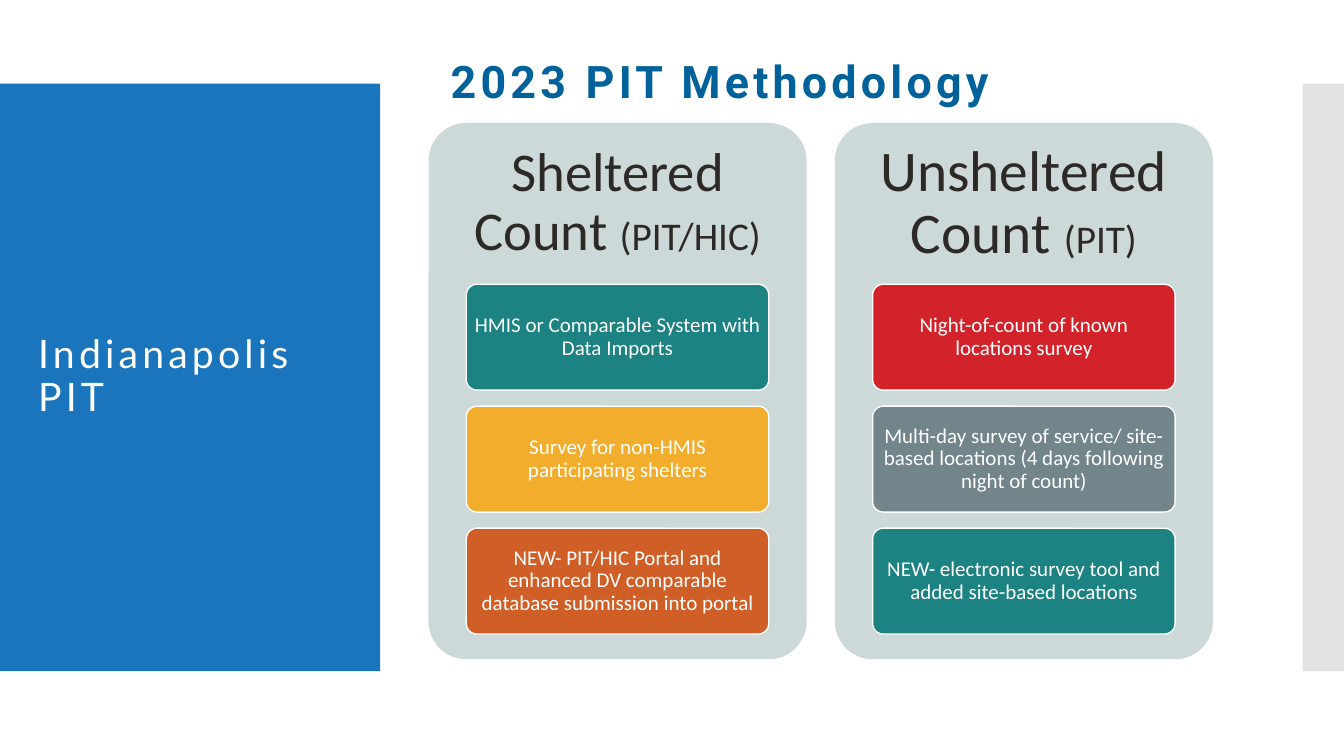
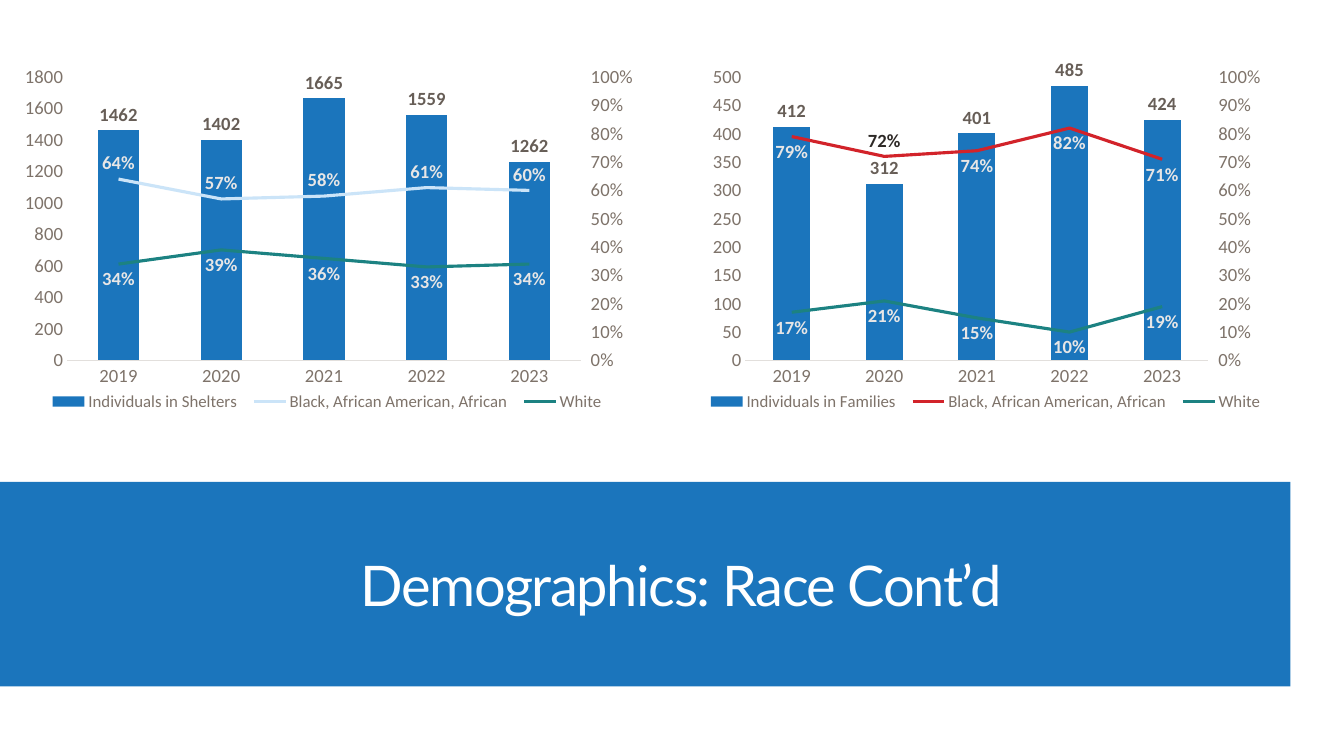
"""Build two slides on the Indianapolis PIT count: methodology and race demographics."""
import pptx
import pptx.chart.axis
import pptx.chart.data
import pptx.dml.color
import pptx.enum.chart
import pptx.enum.shapes
import pptx.enum.text
import pptx.oxml
import pptx.oxml.ns
import pptx.util

INCH = pptx.util.Inches
PT = pptx.util.Pt
QN = pptx.oxml.ns.qn
SHAPES = pptx.enum.shapes.MSO_SHAPE
ANCHOR = pptx.enum.text.MSO_ANCHOR
ALIGN = pptx.enum.text.PP_ALIGN
LABEL = pptx.enum.chart.XL_LABEL_POSITION
TICK = pptx.enum.chart.XL_TICK_MARK

WIDTH, HEIGHT = 13.33, 7.5
COLORS = {
    "blue": "1B75BC", "navy": "00629B", "white": "FFFFFF", "strip": "C8C8C8",
    "panel": "CDD8D8", "ink": "2D2926", "teal": "1C8282", "amber": "F3AD2C",
    "orange": "D05F27", "red": "D2232A", "slate": "71858B", "sky": "CBE4F8",
    "axis": "7E736A", "axis_line": "E2DFDC", "bar_label": "675E57", "line_label": "E7E6E6",
}

COUNTS = [
    {"heading": "Sheltered Count ", "scope": "(PIT/HIC)", "size": 39, "methods": [
        ("HMIS or Comparable System with Data Imports", "teal"),
        ("Survey for non-HMIS participating shelters", "amber"),
        ("NEW- PIT/HIC Portal and enhanced DV comparable database submission into portal", "orange"),
    ]},
    {"heading": "Unsheltered Count ", "scope": "(PIT)", "size": 41, "methods": [
        ("Night-of-count of known locations survey", "red"),
        ("Multi-day survey of service/ site-based locations (4 days following night of count)", "slate"),
        ("NEW- electronic survey tool and added site-based locations", "teal"),
    ]},
]

YEARS = ["2019", "2020", "2021", "2022", "2023"]
RACE_CHARTS = [
    {"box": (0.1, 0.58, 6.29, 3.7), "top": 1800, "step": 200,
     "plot_left": 0.09, "legend_span": (0.05, 0.9),
     "people": ("Individuals in Shelters", [1462, 1402, 1665, 1559, 1262]),
     "shares": [
         ("Black, African American, African", [0.64, 0.57, 0.58, 0.61, 0.60], "sky", LABEL.ABOVE),
         ("White", [0.34, 0.39, 0.36, 0.33, 0.34], "teal", LABEL.BELOW)],
     "dark_label": None},
    {"box": (6.94, 0.58, 5.67, 3.7), "top": 500, "step": 50,
     "plot_left": 0.08, "legend_span": (0, 1),
     "people": ("Individuals in Families", [412, 312, 401, 485, 424]),
     "shares": [
         ("Black, African American, African", [0.79, 0.72, 0.74, 0.82, 0.71], "red", LABEL.BELOW),
         ("White", [0.17, 0.21, 0.15, 0.10, 0.19], "teal", LABEL.BELOW)],
     "dark_label": (0, 1)},
]

CHART_NS = 'xmlns:c="http://schemas.openxmlformats.org/drawingml/2006/chart"'
SHARE_PLOT = f"""<c:lineChart {CHART_NS}><c:grouping val="standard"/><c:varyColors val="0"/>
<c:marker val="1"/><c:axId val="5001"/><c:axId val="5002"/></c:lineChart>"""
SHARE_YEARS = f"""<c:catAx {CHART_NS}><c:axId val="5001"/>
<c:scaling><c:orientation val="minMax"/></c:scaling><c:delete val="1"/><c:axPos val="b"/>
<c:crossAx val="5002"/><c:crosses val="autoZero"/></c:catAx>"""
SHARE_AXIS = f"""<c:valAx {CHART_NS}><c:axId val="5002"/>
<c:scaling><c:orientation val="minMax"/></c:scaling><c:delete val="0"/><c:axPos val="r"/>
<c:numFmt formatCode="0%" sourceLinked="0"/><c:tickLblPos val="nextTo"/>
<c:crossAx val="5001"/><c:crosses val="max"/><c:crossBetween val="between"/></c:valAx>"""


def rgb(color):
    return pptx.dml.color.RGBColor.from_string(COLORS[color])


def set_font(font, size, color, face="Calibri", bold=False):
    font.size, font.name, font.bold = PT(size), face, bold
    font.color.rgb = rgb(color)


def write(shape, *parts, size=15, color="white", face="Calibri", bold=False,
          align=ALIGN.LEFT, anchor=ANCHOR.MIDDLE, spacing=0, insets=(0.1, 0.05)):
    """Write text parts into a shape; a part may be a (text, size) pair."""
    frame = shape.text_frame
    frame.word_wrap = True
    frame.auto_size = pptx.enum.text.MSO_AUTO_SIZE.NONE
    frame.vertical_anchor = anchor
    frame.margin_left = frame.margin_right = INCH(insets[0])
    frame.margin_top = frame.margin_bottom = INCH(insets[1])
    paragraph = frame.paragraphs[0]
    paragraph.alignment, paragraph.line_spacing = align, 0.9
    for part in parts:
        text, part_size = part if isinstance(part, tuple) else (part, size)
        run = paragraph.add_run()
        run.text = text
        set_font(run.font, part_size, color, face, bold)
        if spacing:
            run.font._element.set("spc", str(spacing * 100))


def add_block(slide, box, color, rounded=False, outline=None, opacity=None):
    kind = SHAPES.ROUNDED_RECTANGLE if rounded else SHAPES.RECTANGLE
    block = slide.shapes.add_shape(kind, *map(INCH, box))
    block.shadow.inherit = False
    block.fill.solid()
    block.fill.fore_color.rgb = rgb(color)
    if rounded:
        block.adjustments[0] = 0.1
    if outline:
        block.line.color.rgb, block.line.width = rgb(outline), PT(1)
    else:
        block.line.fill.background()
    if opacity:
        tint = block._element.spPr.find(".//" + QN("a:srgbClr"))
        tint.append(pptx.oxml.parse_xml(
            '<a:alpha xmlns:a="http://schemas.openxmlformats.org/drawingml/2006/main" '
            f'val="{opacity * 1000}"/>'))
    return block


def add_text(slide, box, *parts, **style):
    write(slide.shapes.add_textbox(*map(INCH, box)), *parts, **style)


def add_title(slide, box, text, **style):
    title = slide.shapes.title
    title.left, title.top, title.width, title.height = map(INCH, box)
    write(title, text, **style)
    slide.shapes._spTree.append(title._element)


def manual_layout(x, y, w, h, inner=False):
    target = '<c:layoutTarget val="inner"/>' if inner else ""
    return pptx.oxml.parse_xml(
        f'<c:layout {CHART_NS}><c:manualLayout>{target}<c:xMode val="edge"/><c:yMode val="edge"/>'
        f'<c:x val="{x}"/><c:y val="{y}"/><c:w val="{w}"/><c:h val="{h}"/></c:manualLayout></c:layout>')


def drop(parent, tag):
    for child in parent.findall(QN(tag)):
        parent.remove(child)


def style_axis(axis, top=None, step=None, tick=TICK.NONE):
    axis.has_major_gridlines = False
    axis.major_tick_mark, axis.minor_tick_mark = tick, TICK.NONE
    set_font(axis.tick_labels.font, 13.3, "axis")
    if top:
        axis.minimum_scale, axis.maximum_scale, axis.major_unit = 0, top, step
        axis.format.line.fill.background()
    else:
        axis.format.line.color.rgb, axis.format.line.width = rgb("axis_line"), PT(0.75)


def move_shares_to_lines(chart, plot_left):
    """Turn all series but the first into lines and return their right-hand axis."""
    plot_area = chart._chartSpace.chart.plotArea
    bars = plot_area.find(QN("c:barChart"))
    lines = pptx.oxml.parse_xml(SHARE_PLOT)
    for share in bars.findall(QN("c:ser"))[1:]:
        drop(share, "c:invertIfNegative")
        lines.find(QN("c:marker")).addprevious(share)
    bars.addnext(lines)
    share_axis = pptx.oxml.parse_xml(SHARE_AXIS)
    plot_area.find(QN("c:valAx")).addnext(share_axis)
    share_axis.addnext(pptx.oxml.parse_xml(SHARE_YEARS))
    drop(plot_area, "c:layout")
    plot_area.insert(0, manual_layout(plot_left, 0.05, 0.81, 0.76, inner=True))
    return pptx.chart.axis.ValueAxis(share_axis)


def add_legend(chart, left, width):
    chart.has_legend = True
    legend = chart.legend
    legend.position = pptx.enum.chart.XL_LEGEND_POSITION.BOTTOM
    legend.include_in_layout = False
    set_font(legend.font, 12, "axis")
    drop(legend._element, "c:layout")
    legend._element.find(QN("c:legendPos")).addnext(manual_layout(left, 0.86, width, 0.12))


def style_labels(series, color, position):
    labels = series.data_labels
    labels.show_value, labels.position = True, position
    set_font(labels.font, 13.3, color, bold=True)
    return labels


def add_race_chart(slide, group):
    data = pptx.chart.data.CategoryChartData()
    data.categories = YEARS
    data.add_series(*group["people"], number_format="General")
    for name, values, _, _ in group["shares"]:
        data.add_series(name, values, number_format="0%")
    chart = slide.shapes.add_chart(
        pptx.enum.chart.XL_CHART_TYPE.COLUMN_CLUSTERED, *map(INCH, group["box"]), data).chart
    set_font(chart.font, 13.3, "ink")
    chart.has_title = False
    style_axis(chart.category_axis)
    style_axis(chart.value_axis, group["top"], group["step"])
    style_axis(move_shares_to_lines(chart, group["plot_left"]), 1, 0.1, TICK.OUTSIDE)
    add_legend(chart, *group["legend_span"])

    bars, lines = chart.plots
    bars.gap_width, bars.vary_by_categories = 150, False
    people = bars.series[0]
    people.format.fill.solid()
    people.format.fill.fore_color.rgb = rgb("blue")
    style_labels(people, "bar_label", LABEL.OUTSIDE_END)
    for share, (_, _, color, position) in zip(lines.series, group["shares"]):
        share.smooth = False
        share.marker.style = pptx.enum.chart.XL_MARKER_STYLE.NONE
        share.format.line.color.rgb, share.format.line.width = rgb(color), PT(2.25)
        labels = style_labels(share, "line_label", position)
        labels.number_format, labels.number_format_is_linked = "0%", False
    if group["dark_label"]:
        share_index, year_index = group["dark_label"]
        label = lines.series[share_index].points[year_index].data_label
        set_font(label.font, 13.3, "ink", bold=True)
        label.position = LABEL.ABOVE


def build_methodology(slide):
    add_block(slide, (0, 0.83, 3.77, 5.83), "blue")
    add_block(slide, (12.92, 0.83, WIDTH - 12.92, 5.83), "strip", opacity=50)
    add_title(slide, (4.37, 0.45, 8.13, 0.77), "2023 PIT Methodology",
              size=32, color="navy", face="Roboto", bold=True, spacing=3)
    add_text(slide, (0.28, 1.23, 3.22, 5.03), "Indianapolis PIT", size=28, face="Lato", spacing=3)
    panel_top, panel_width, heading_height = 1.22, 3.75, 1.6
    card_width, card_height, card_gap = 3, 1.05, 0.16
    for column, count in enumerate(COUNTS):
        left = 4.25 + column * (panel_width + 0.28)
        add_block(slide, (left, panel_top, panel_width, 5.32), "panel", rounded=True)
        add_text(slide, (left, panel_top, panel_width, heading_height),
                 count["heading"], (count["scope"], 28), size=count["size"], color="ink",
                 align=ALIGN.CENTER, insets=(0.16, 0.16))
        for row, (method, color) in enumerate(count["methods"]):
            top = panel_top + heading_height + row * (card_height + card_gap)
            card = add_block(slide, (left + (panel_width - card_width) / 2, top, card_width, card_height),
                             color, rounded=True, outline="white")
            write(card, method, align=ALIGN.CENTER, insets=(0.04, 0.03))


def build_demographics(slide):
    add_block(slide, (0, 4.78, 12.8, 2.03), "blue")
    add_title(slide, (1.17, 5.02, 11.17, 1.17), "Demographics: Race Cont’d",
              size=40, face="Lato", align=ALIGN.CENTER, anchor=ANCHOR.BOTTOM, spacing=-1)
    for group in RACE_CHARTS:
        add_race_chart(slide, group)


def main():
    deck = pptx.Presentation()
    deck.slide_width, deck.slide_height = INCH(WIDTH), INCH(HEIGHT)
    for build in (build_methodology, build_demographics):
        build(deck.slides.add_slide(deck.slide_layouts.get_by_name("Title Only")))
    deck.save("out.pptx")


if __name__ == "__main__":
    main()
